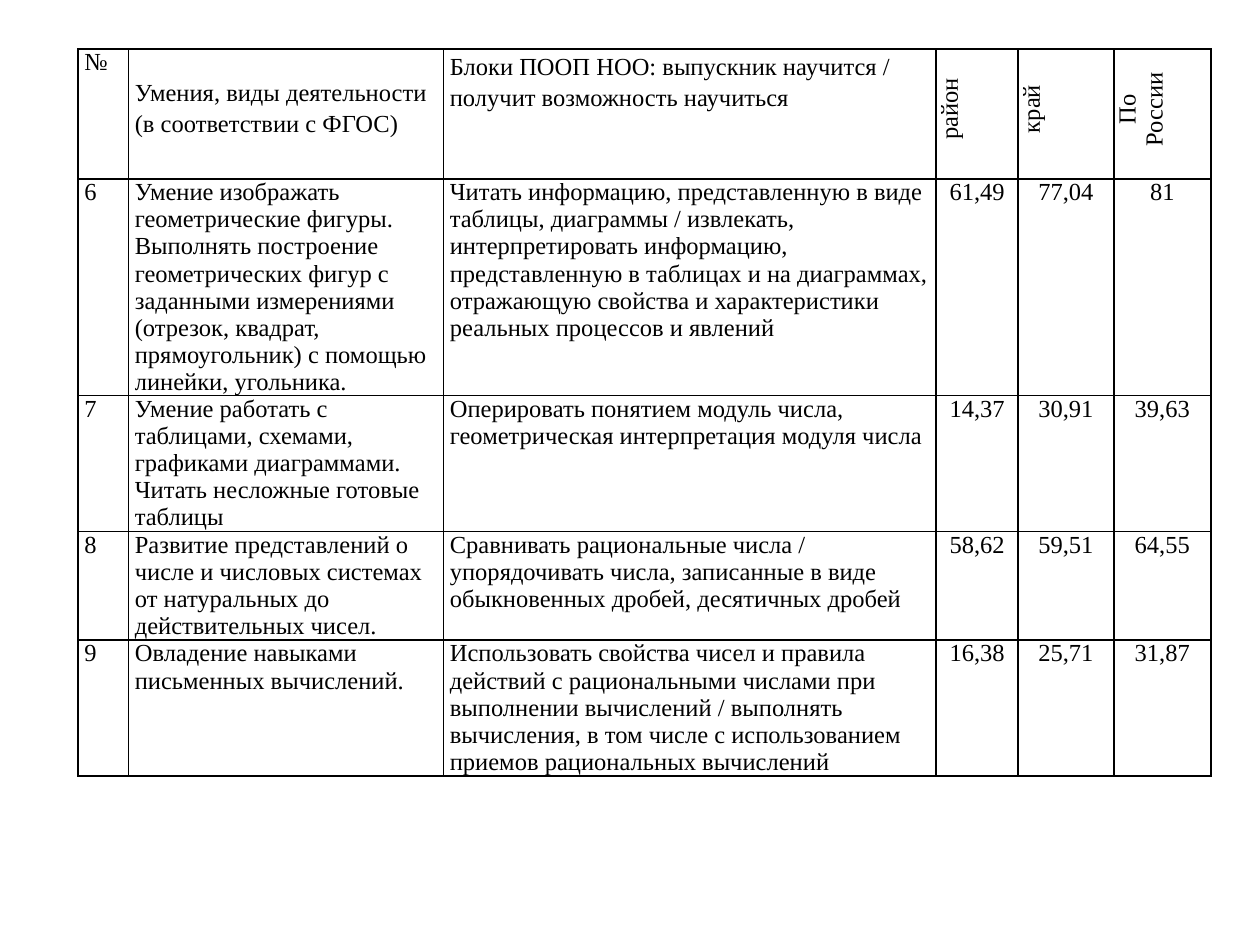
from pptx import Presentation
from pptx.dml.color import RGBColor
from pptx.enum import text
from pptx.oxml import parse_xml
from pptx.oxml.ns import nsdecls
from pptx.util import Inches, Pt

BLACK = RGBColor(0, 0, 0)
WHITE = RGBColor(255, 255, 255)
FONT = "Times New Roman"

COLS = [0.4, 2.5, 3.91, 0.65, 0.76, 0.77]
ROWS = [1.03, 1.72, 1.08, 0.86, 1.08]
HEAD = [
    "№",
    "Умения, виды деятельности (в соответствии с ФГОС)",
    "Блоки ПООП НОО: выпускник научится / получит возможность научиться",
    "район", "край", "По России",
]
SKILLS = [
    ["6",
     "Умение изображать геометрические фигуры. Выполнять построение "
     "геометрических фигур с заданными измерениями (отрезок, квадрат, "
     "прямоугольник) с помощью линейки, угольника.",
     "Читать информацию, представленную в виде таблицы, диаграммы / извлекать, "
     "интерпретировать информацию, представленную в таблицах и на диаграммах, "
     "отражающую свойства и характеристики реальных процессов и явлений",
     "61,49", "77,04", "81"],
    ["7",
     "Умение работать с таблицами, схемами, графиками диаграммами. "
     "Читать несложные готовые таблицы",
     "Оперировать понятием модуль числа, геометрическая интерпретация "
     "модуля числа",
     "14,37", "30,91", "39,63"],
    ["8",
     "Развитие представлений о числе и числовых системах от натуральных "
     "до действительных чисел.",
     "Сравнивать рациональные числа / упорядочивать числа, записанные в виде "
     "обыкновенных дробей, десятичных дробей",
     "58,62", "59,51", "64,55"],
    ["9",
     "Овладение навыками письменных вычислений.",
     "Использовать свойства чисел и правила действий с рациональными числами "
     "при выполнении вычислений / выполнять вычисления, в том числе "
     "с использованием приемов рациональных вычислений",
     "16,38", "25,71", "31,87"],
]


def frame(cell):
    """Black 1 pt border on all sides, white fill."""
    props = cell._tc.get_or_add_tcPr()
    for side in ("lnL", "lnR", "lnT", "lnB"):
        props.append(parse_xml(
            f'<a:{side} {nsdecls("a")} w="{Pt(1)}"><a:solidFill>'
            f'<a:srgbClr val="{BLACK}"/></a:solidFill></a:{side}>'))
    cell.fill.solid()
    cell.fill.fore_color.rgb = WHITE


def write(cell, words, centred):
    cell.margin_left = cell.margin_right = Inches(0.05)
    cell.margin_top = cell.margin_bottom = 0
    para = cell.text_frame.paragraphs[0]
    para.alignment = text.PP_ALIGN.CENTER if centred else text.PP_ALIGN.LEFT
    run = para.add_run()
    run.text = words
    run.font.name = FONT
    run.font.size = Pt(14)
    run.font.color.rgb = BLACK
    return para


def style_head(cell, para, col):
    if col >= 3:  # region names read upwards
        cell._tc.get_or_add_tcPr().set("vert", "vert270")
        para._p.get_or_add_pPr().set("marL", str(Inches(0.08)))
    elif col >= 1:
        para.line_spacing = 1.15
    if col == 1:
        cell.margin_top = Inches(0.21)


def add_results(slide, left, top, width, height):
    shape = slide.shapes.add_table(len(ROWS), len(COLS), left, top, width, height)
    table = shape.table
    table.first_row = table.horz_banding = False
    for col, size in zip(table.columns, COLS):
        col.width = Inches(size)
    for row, size in zip(table.rows, ROWS):
        row.height = Inches(size)
    for r, line in enumerate([HEAD] + SKILLS):
        for c, words in enumerate(line):
            cell = table.cell(r, c)
            para = write(cell, words, c >= 3)
            if r == 0:
                style_head(cell, para, c)
            frame(cell)


def main():
    deck = Presentation()
    deck.slide_width, deck.slide_height = Inches(10), Inches(7.5)
    slide = deck.slides.add_slide(deck.slide_layouts[6])
    # Table of skills with results by region
    add_results(slide, Inches(0.62), Inches(0.39),
                Inches(sum(COLS)), Inches(sum(ROWS)))
    deck.save("out.pptx")


if __name__ == "__main__":
    main()
